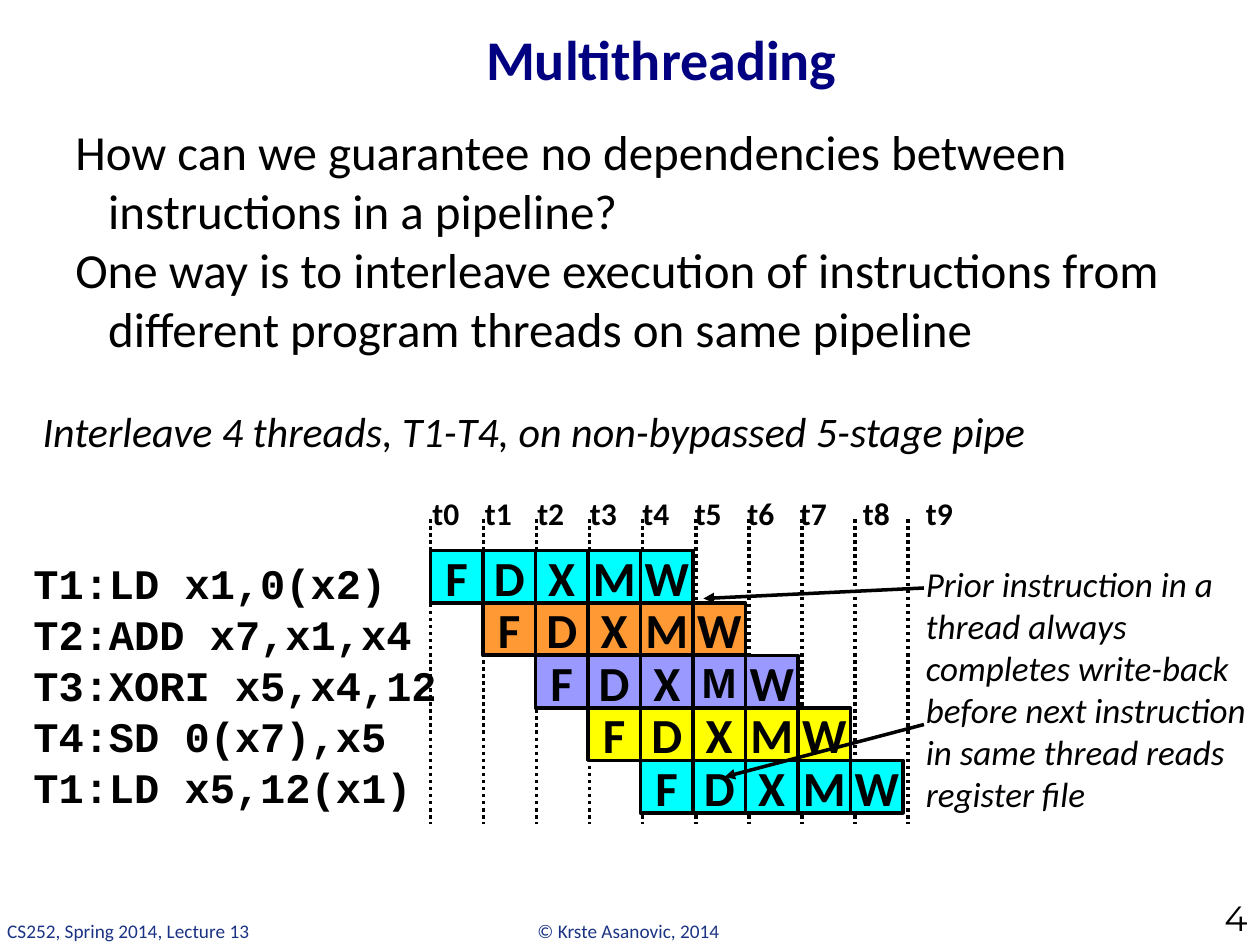
"""Build the Multithreading pipeline slide."""
from dataclasses import dataclass

from lxml import etree
from pptx import Presentation
from pptx.dml.color import RGBColor
from pptx.enum.dml import MSO_LINE
from pptx.enum.shapes import MSO_CONNECTOR, MSO_SHAPE
from pptx.enum.text import MSO_ANCHOR, MSO_AUTO_SIZE, PP_ALIGN
from pptx.oxml.ns import qn
from pptx.util import Pt

LEFT, CENTER, RIGHT = PP_ALIGN.LEFT, PP_ALIGN.CENTER, PP_ALIGN.RIGHT
TOP, MIDDLE, BOTTOM = MSO_ANCHOR.TOP, MSO_ANCHOR.MIDDLE, MSO_ANCHOR.BOTTOM
GROW, FIXED = MSO_AUTO_SIZE.SHAPE_TO_FIT_TEXT, MSO_AUTO_SIZE.NONE
RECTANGLE, STRAIGHT, DOTTED = MSO_SHAPE.RECTANGLE, MSO_CONNECTOR.STRAIGHT, MSO_LINE.ROUND_DOT

BLACK, NAVY, FOOTER_BLUE = "000000", "000081", "1B3384"
CYAN, ORANGE, LILAC, YELLOW = "00FFFF", "FF9933", "9999FF", "FFFF00"
STAGES = "FDXMW"
STAGE_SIZE = 30
PIPE_LEFT, PIPE_TOP = 246, 314.5
CLOCK_TOP, CLOCK_BOTTOM, CLOCK_STEP = 296.7, 470.9, 30.32
TIME_LEFTS = [240 + 30 * cycle for cycle in range(8)] + [486, 522]


@dataclass(frozen=True)
class Font:
    size: float
    color: str = BLACK
    name: str = "Calibri"
    bold: bool = False
    italic: bool = False


@dataclass(frozen=True)
class Label:
    lines: tuple[str, ...]
    box: tuple[float, float, float, float]
    font: Font
    align: PP_ALIGN = LEFT
    anchor: MSO_ANCHOR = TOP
    wrap: bool = False
    fit: MSO_AUTO_SIZE = GROW
    hanging: float = 0
    line_height: float = 0


@dataclass(frozen=True)
class Instruction:
    code: str
    color: str


@dataclass(frozen=True)
class Pointer:
    start: tuple[float, float]
    end: tuple[float, float]


STAGE_FONT = Font(28, bold=True)
ODD_STAGE_FONT = Font(24, name="Arial", bold=True)
ODD_STAGE = (2, 3)
TIME_FONT = Font(18, bold=True)
FOOTER_FONT = Font(11, FOOTER_BLUE)

INSTRUCTIONS = (
    Instruction("T1:LD x1,0(x2)", CYAN),
    Instruction("T2:ADD x7,x1,x4", ORANGE),
    Instruction("T3:XORI x5,x4,12", LILAC),
    Instruction("T4:SD 0(x7),x5", YELLOW),
    Instruction("T1:LD x5,12(x1)", CYAN),
)

PAGE_TEXT = (
    Label(("© Krste Asanovic, 2014",), (300, 522, 120, 20.6), FOOTER_FONT),
    Label(("CS252, Spring 2014, Lecture 13",), (-3, 522, 154, 20.6), FOOTER_FONT),
    Label(("Multithreading",), (96, 6, 564, 54), Font(32, NAVY, bold=True),
          align=CENTER, anchor=MIDDLE, wrap=True, fit=FIXED),
    Label(("How can we guarantee no dependencies between instructions in a pipeline?",
           "One way is to interleave execution of instructions from different program "
           "threads on same pipeline"),
          (36, 66, 648, 438), Font(28), wrap=True, fit=FIXED, hanging=18.75),
    Label(("4",), (654, 521, 66, 19), Font(20, name="Montserrat"),
          align=RIGHT, anchor=BOTTOM, wrap=True, fit=FIXED),
)

DIAGRAM_TEXT = (
    Label(tuple(step.code for step in INSTRUCTIONS), (12, 314.5, 247, 152.6),
          Font(24, name="Courier New", bold=True), line_height=29.2),
    Label(("Interleave 4 threads, T1-T4, on non-bypassed 5-stage pipe",),
          (17.3, 228, 589, 36.5), Font(24, italic=True)),
    Label(("Prior instruction in a thread always completes write-back before next "
           "instruction in same thread reads register file",),
          (522, 318, 198, 152.6), Font(20, italic=True), wrap=True),
)

POINTERS = (
    Pointer((528, 336), (402, 342)),
    Pointer((528, 414), (414, 444)),
)


def rgb(color: str) -> RGBColor:
    """Turn a hex string into a colour."""
    return RGBColor.from_string(color)


def style_paragraph(paragraph, font: Font, align: PP_ALIGN) -> None:
    """Align a paragraph and format its runs."""
    paragraph.alignment = align
    for run in paragraph.runs:
        run.font.size = Pt(font.size)
        run.font.name = font.name
        run.font.bold = font.bold
        run.font.italic = font.italic
        run.font.color.rgb = rgb(font.color)


def draw_label(shapes, label: Label) -> None:
    """Draw a text box."""
    frame = shapes.add_textbox(*map(Pt, label.box)).text_frame
    frame.text = "\n".join(label.lines)
    frame.word_wrap = label.wrap
    frame.auto_size = label.fit
    frame.vertical_anchor = label.anchor
    for paragraph in frame.paragraphs:
        style_paragraph(paragraph, label.font, label.align)
        if label.line_height:
            paragraph.line_spacing = Pt(label.line_height)
        if label.hanging:
            properties = paragraph._p.get_or_add_pPr()
            properties.set("marL", str(Pt(label.hanging)))
            properties.set("indent", str(-Pt(label.hanging)))


def draw_stage(shapes, row: int, column: int, color: str) -> None:
    """Draw one pipeline stage of an instruction."""
    left = PIPE_LEFT + (row + column) * STAGE_SIZE
    top = PIPE_TOP + row * STAGE_SIZE
    stage = shapes.add_shape(RECTANGLE, Pt(left), Pt(top), Pt(STAGE_SIZE), Pt(STAGE_SIZE))
    stage.shadow.inherit = False
    stage.fill.solid()
    stage.fill.fore_color.rgb = rgb(color)
    stage.line.color.rgb = rgb(BLACK)
    stage.line.width = Pt(2)
    frame = stage.text_frame
    frame.text = STAGES[column]
    frame.word_wrap = False
    frame.vertical_anchor = MIDDLE
    font = ODD_STAGE_FONT if (row, column) == ODD_STAGE else STAGE_FONT
    style_paragraph(frame.paragraphs[0], font, CENTER)


def draw_line(shapes, start: tuple[float, float], end: tuple[float, float]):
    """Draw a plain black line and return it."""
    line = shapes.add_connector(STRAIGHT, *map(Pt, start + end))
    line.line.color.rgb = rgb(BLACK)
    line.line.width = Pt(2)
    etree.SubElement(line._element.spPr, qn("a:effectLst"))
    return line


def draw_clock_edge(shapes, cycle: int) -> None:
    """Draw the dotted line that starts a clock cycle."""
    x = PIPE_LEFT + cycle * CLOCK_STEP
    draw_line(shapes, (x, CLOCK_TOP), (x, CLOCK_BOTTOM)).line.dash_style = DOTTED


def draw_pointer(shapes, pointer: Pointer) -> None:
    """Draw a line with an arrowhead at its end."""
    arrow = draw_line(shapes, pointer.start, pointer.end)
    etree.SubElement(arrow.line._get_or_add_ln(), qn("a:tailEnd"), type="triangle")


def main() -> None:
    """Build and save the slide."""
    deck = Presentation()
    deck.slide_width, deck.slide_height = Pt(720), Pt(540)
    shapes = deck.slides.add_slide(deck.slide_layouts[6]).shapes
    for label in PAGE_TEXT:
        draw_label(shapes, label)
    for cycle in range(len(TIME_LEFTS)):
        draw_clock_edge(shapes, cycle)
    for cycle, left in enumerate(TIME_LEFTS):
        draw_label(shapes, Label((f"t{cycle}",), (left, 278.6, 30, 29), TIME_FONT))
    for row, instruction in enumerate(INSTRUCTIONS):
        for column in range(len(STAGES)):
            draw_stage(shapes, row, column, instruction.color)
    for label in DIAGRAM_TEXT:
        draw_label(shapes, label)
    for pointer in POINTERS:
        draw_pointer(shapes, pointer)
    deck.save("out.pptx")


if __name__ == "__main__":
    main()
